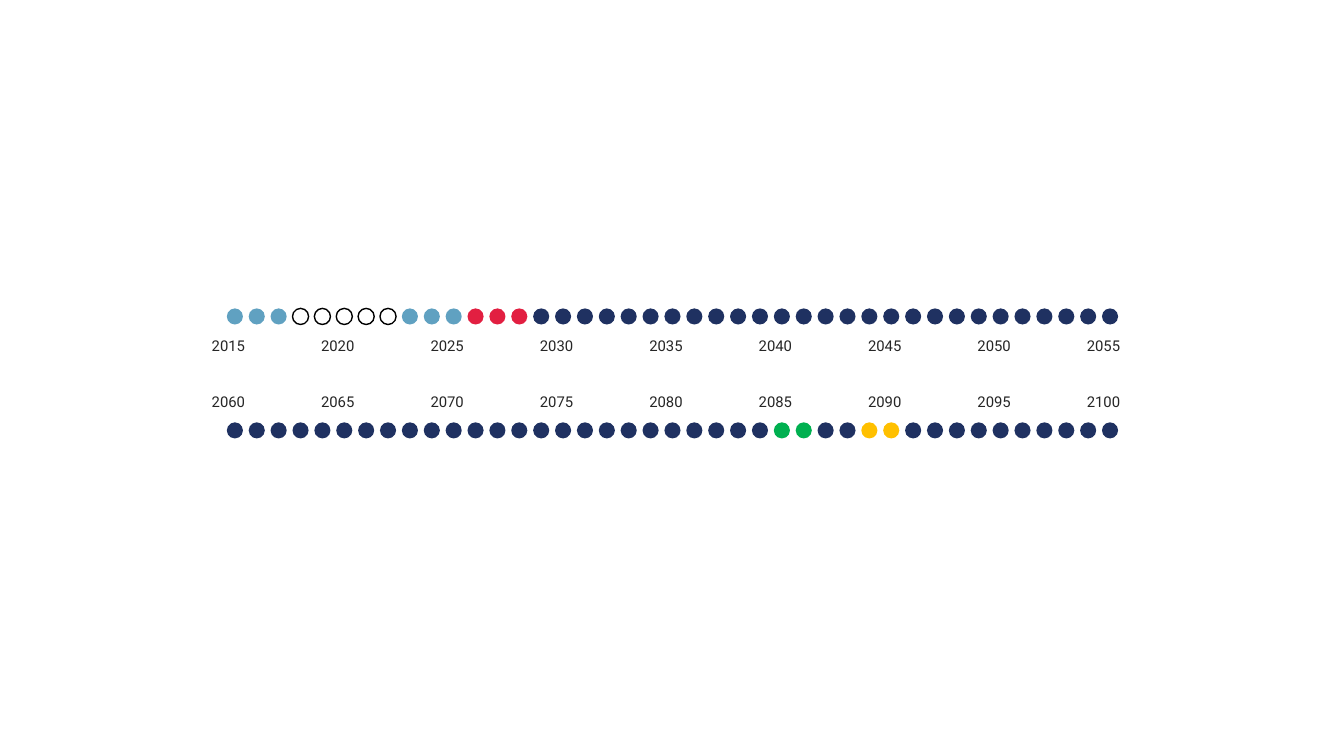
"""Build a two-row dot timeline running from 2015 to 2100."""
import pptx
import pptx.dml.color
import pptx.enum.shapes
import pptx.enum.text
import pptx.util

Inches = pptx.util.Inches
NAVY, BLUE, RED, GREEN, AMBER, WHITE = "1F3161", "60A1C1", "E21F41", "00B050", "FFC000", "FFFFFF"
DOT_COUNT = 41
YEARS_PER_LABEL = 5
DOT_SIZE = 0.16
FIRST_DOT_LEFT = 2.25
FIRST_LABEL_LEFT = 2.1
PITCH = 8.68 / (DOT_COUNT - 1)


def rgb(value):
    return pptx.dml.color.RGBColor.from_string(value)


FRAME_FORMAT = {
    "margin_left": 0, "margin_top": 0, "margin_right": 0, "margin_bottom": 0,
    "word_wrap": True, "vertical_anchor": pptx.enum.text.MSO_ANCHOR.MIDDLE,
}
FONT_FORMAT = {"name": "Roboto", "size": pptx.util.Pt(10.6)}

TIMELINES = [
    {"start": 2015, "dot_top": 3.06, "label_top": 3.31,
     "runs": [(BLUE, 3), (WHITE, 5), (BLUE, 3), (RED, 3), (NAVY, 27)]},
    {"start": 2060, "dot_top": 4.19, "label_top": 3.86,
     "runs": [(NAVY, 25), (GREEN, 2), (NAVY, 2), (AMBER, 2), (NAVY, 10)]},
]

deck = pptx.Presentation()
deck.slide_width, deck.slide_height = Inches(13.33), Inches(7.5)
page = deck.slides.add_slide(deck.slide_layouts[6])

for timeline in TIMELINES:
    group = page.shapes.add_group_shape()
    colours = [colour for colour, count in timeline["runs"] for _ in range(count)]

    for index, colour in enumerate(colours):
        dot = group.shapes.add_shape(
            pptx.enum.shapes.MSO_SHAPE.OVAL,
            Inches(FIRST_DOT_LEFT + index * PITCH), Inches(timeline["dot_top"]),
            Inches(DOT_SIZE), Inches(DOT_SIZE))
        dot.shadow.inherit = False
        dot.fill.solid()
        dot.fill.fore_color.rgb = rgb(colour)
        if colour == WHITE:
            dot.line.color.rgb = rgb("000000")
            dot.line.width = pptx.util.Pt(1)
        else:
            dot.line.fill.background()

    for index in range(0, DOT_COUNT, YEARS_PER_LABEL):
        box = group.shapes.add_textbox(
            Inches(FIRST_LABEL_LEFT + index * PITCH), Inches(timeline["label_top"]),
            Inches(0.45), Inches(0.24))
        for name, value in FRAME_FORMAT.items():
            setattr(box.text_frame, name, value)
        span = box.text_frame.paragraphs[0].add_run()
        span.text = str(timeline["start"] + index)
        for name, value in FONT_FORMAT.items():
            setattr(span.font, name, value)
        span.font.color.rgb = rgb("262626")

deck.save("out.pptx")
